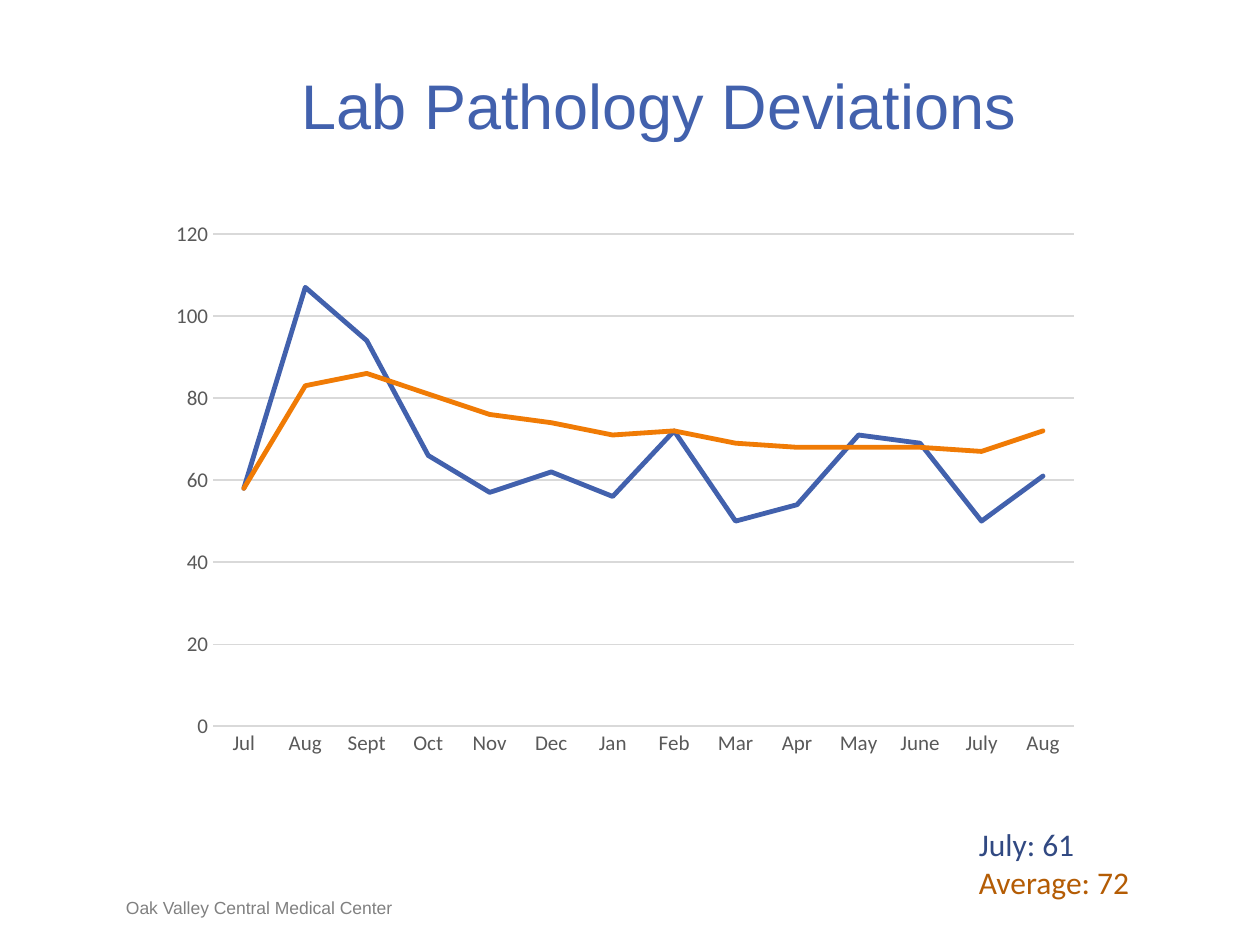
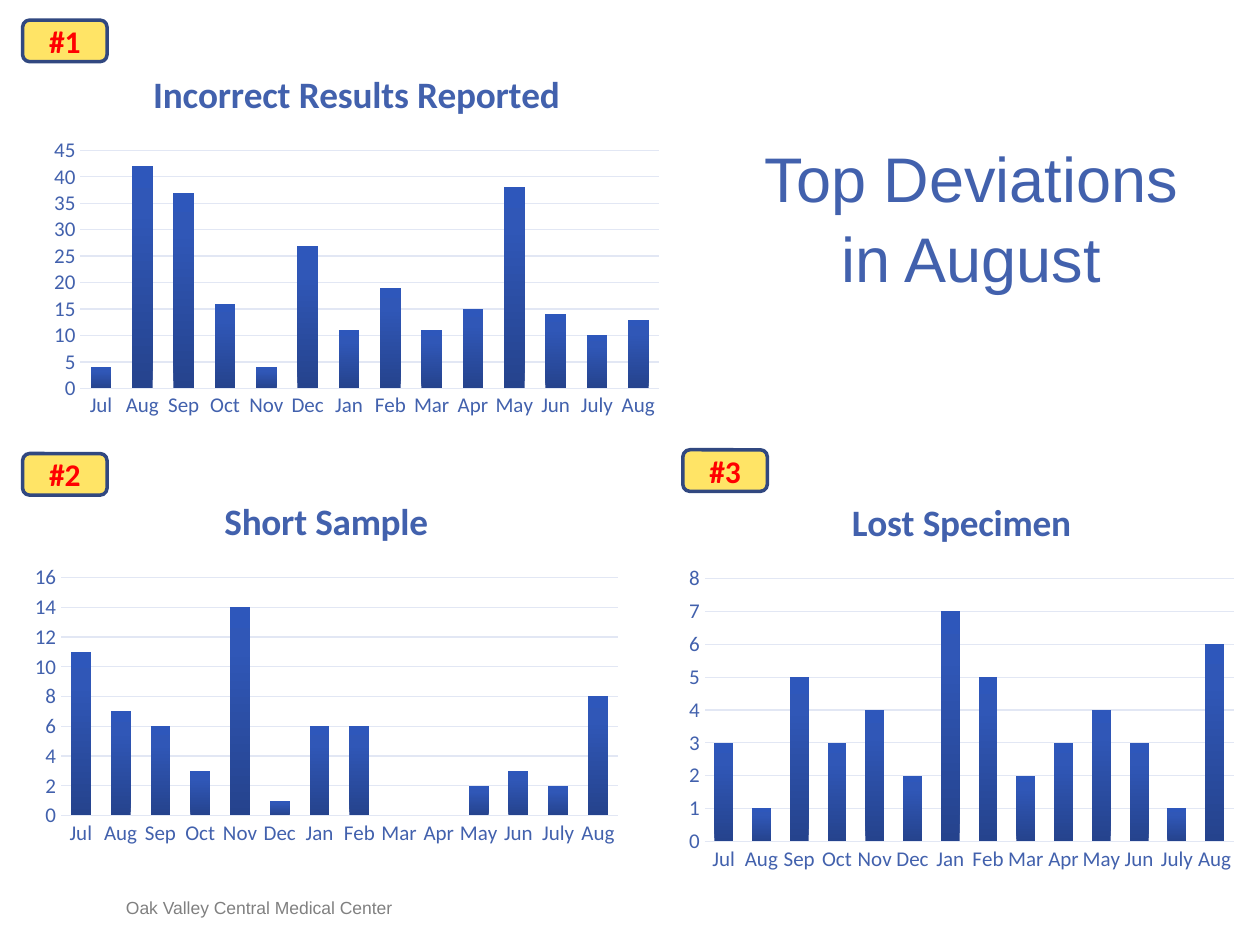
"""Builds two slides of laboratory deviation charts."""
import copy
import pptx
import pptx.chart.data
import pptx.dml.color
import pptx.enum.chart
import pptx.enum.shapes
import pptx.enum.text
import pptx.util

Inches, Pt = pptx.util.Inches, pptx.util.Pt
ALIGN, ANCHOR = pptx.enum.text.PP_ALIGN, pptx.enum.text.MSO_ANCHOR
KIND = pptx.enum.chart.XL_CHART_TYPE

HUES = {
    "blue": "4261AD", "navy": "314982", "orange": "F07B05", "rust": "B45C04",
    "gray": "808080", "label": "595959", "rule": "D9D9D9", "grid": "E2E7F4",
    "gold": "FFE466", "edge": "314880", "red": "FF0000",
    "deep": "25438D", "mid": "3057B7", "top": "2E57BB",
}
FADE = [("deep", 0), ("mid", 0.8), ("top", 1)]

FOOTER = "Oak Valley Central Medical Center"
TREND = {
    "title": "Lab Pathology Deviations",
    "months": "Jul Aug Sept Oct Nov Dec Jan Feb Mar Apr May June July Aug".split(),
    "lines": [
        ("Series 1", "blue", [58, 107, 94, 66, 57, 62, 56, 72, 50, 54, 71, 69, 50, 61]),
        ("Series 2", "orange", [58, 83, 86, 81, 76, 74, 71, 72, 69, 68, 68, 68, 67, 72]),
    ],
    "notes": [("July: 61", "navy"), ("Average: 72", "rust")],
}
TOP = "Top Deviations in August"
MONTHS = "Jul Aug Sep Oct Nov Dec Jan Feb Mar Apr May Jun July Aug".split()
RANKS = [
    {"name": "Incorrect Results Reported", "box": (0.33, 0.38, 5, 3),
     "badge": (0.18, 0.16), "max": 45, "step": 5,
     "vals": [4, 42, 37, 16, 4, 27, 11, 19, 11, 15, 38, 14, 10, 13]},
    {"name": "Short Sample", "box": (0.18, 3.77, 4.82, 3),
     "badge": (0.18, 3.6), "max": 16, "step": 2,
     "vals": [11, 7, 6, 3, 14, 1, 6, 6, 0, 0, 2, 3, 2, 8]},
    {"name": "Lost Specimen", "box": (5.38, 3.77, 4.5, 3.21),
     "badge": (5.42, 3.57), "max": 8, "step": 1,
     "vals": [3, 1, 5, 3, 4, 2, 7, 5, 2, 3, 4, 3, 1, 6]},
]


def rgb(hue):
    return pptx.dml.color.RGBColor.from_string(HUES[hue])


def style(font, face, size, hue, bold=False):
    font.name, font.size, font.bold = face, Pt(size), bold
    font.color.rgb = rgb(hue)


def stroke(line, hue, width):
    line.color.rgb = rgb(hue)
    line.width = Pt(width)


def write(slide, box, rows, face, size, inset=True):
    frame = slide.shapes.add_textbox(*map(Inches, box)).text_frame
    frame.word_wrap = True
    if not inset:
        frame.margin_left = frame.margin_right = 0
        frame.margin_top = frame.margin_bottom = 0
    frame.text = "\n".join(text for text, hue in rows)
    for para, (text, hue) in zip(frame.paragraphs, rows):
        style(para.runs[0].font, face, size, hue)
    return frame


def start(deck, title, box):
    slide = deck.slides.add_slide(deck.slide_layouts[6])
    foot = write(slide, (1, 7.12, 3.17, 0.17), [(FOOTER, "gray")], "Arial", 10, False)
    foot.vertical_anchor = ANCHOR.BOTTOM
    head = write(slide, box, [(title, "blue")], "Arial", 36, False).paragraphs[0]
    head.alignment = ALIGN.CENTER
    head.line_spacing = 1.05
    return slide


def plot(slide, kind, box, months, rows, top, step, ink, rule, width):
    data = pptx.chart.data.CategoryChartData()
    data.categories = months
    for name, vals in rows:
        data.add_series(name, vals)
    chart = slide.shapes.add_chart(kind, *map(Inches, box), data).chart
    style(chart.font, "Calibri", 12, ink)
    chart.has_legend = chart.has_title = False
    chart.plots[0].vary_by_categories = False
    cat, val = chart.category_axis, chart.value_axis
    for axis in (cat, val):
        axis.major_tick_mark = pptx.enum.chart.XL_TICK_MARK.NONE
        style(axis.tick_labels.font, "Calibri", 12, ink)
    stroke(cat.format.line, rule, width)
    val.format.line.fill.background()
    val.has_major_gridlines = True
    stroke(val.major_gridlines.format.line, rule, 0.75)
    val.minimum_scale, val.maximum_scale, val.major_unit = 0, top, step
    return chart


def trend(deck):
    slide = start(deck, TREND["title"], (0.98, 0.5, 8.5, 0.61))
    write(slide, (7.67, 6.5, 2, 0.71), TREND["notes"], "Calibri", 18)
    rows = [(name, vals) for name, hue, vals in TREND["lines"]]
    chart = plot(slide, KIND.LINE, (1.25, 1.67, 7.42, 4.42), TREND["months"],
                 rows, 120, 20, "label", "rule", 1)
    for series, (name, hue, vals) in zip(chart.series, TREND["lines"]):
        series.smooth = False
        series.marker.style = pptx.enum.chart.XL_MARKER_STYLE.NONE
        stroke(series.format.line, hue, 2.75)
        series._element.xpath("./c:spPr/a:ln")[0].set("cap", "rnd")


def fade(series):
    fill = series.format.fill
    fill.gradient()
    fill.gradient_angle = 90
    stops = series._element.xpath(".//a:gsLst")[0]
    stops.insert(1, copy.deepcopy(stops[0]))
    for stop, (hue, place) in zip(fill.gradient_stops, FADE):
        stop.color.rgb = rgb(hue)
        stop.position = place


def badge(slide, spot, text):
    shape = slide.shapes.add_shape(pptx.enum.shapes.MSO_SHAPE.ROUNDED_RECTANGLE,
                                   *map(Inches, (*spot, 0.67, 0.33)))
    shape.shadow.inherit = False
    shape.fill.solid()
    shape.fill.fore_color.rgb = rgb("gold")
    stroke(shape.line, "edge", 2)
    frame = shape.text_frame
    frame.text = text
    frame.vertical_anchor = ANCHOR.MIDDLE
    para = frame.paragraphs[0]
    para.alignment = ALIGN.CENTER
    style(para.runs[0].font, "Calibri", 18, "red", True)


def ranks(deck):
    slide = start(deck, TOP, (6, 1.08, 3.42, 1.21))
    for place, item in enumerate(RANKS, 1):
        chart = plot(slide, KIND.COLUMN_CLUSTERED, item["box"], MONTHS,
                     [(item["name"], item["vals"])], item["max"], item["step"],
                     "blue", "grid", 0.75)
        chart.has_title = True
        frame = chart.chart_title.text_frame
        frame.text = item["name"]
        style(frame.paragraphs[0].runs[0].font, "Calibri", 21.3, "blue", True)
        chart.chart_title.include_in_layout = False
        bars = chart.plots[0]
        bars.gap_width, bars.overlap = 100, -24
        fade(bars.series[0])
        badge(slide, item["badge"], f"#{place}")


def main():
    deck = pptx.Presentation()
    deck.slide_width, deck.slide_height = Inches(10), Inches(7.5)
    trend(deck)
    ranks(deck)
    deck.save("out.pptx")


if __name__ == "__main__":
    main()
